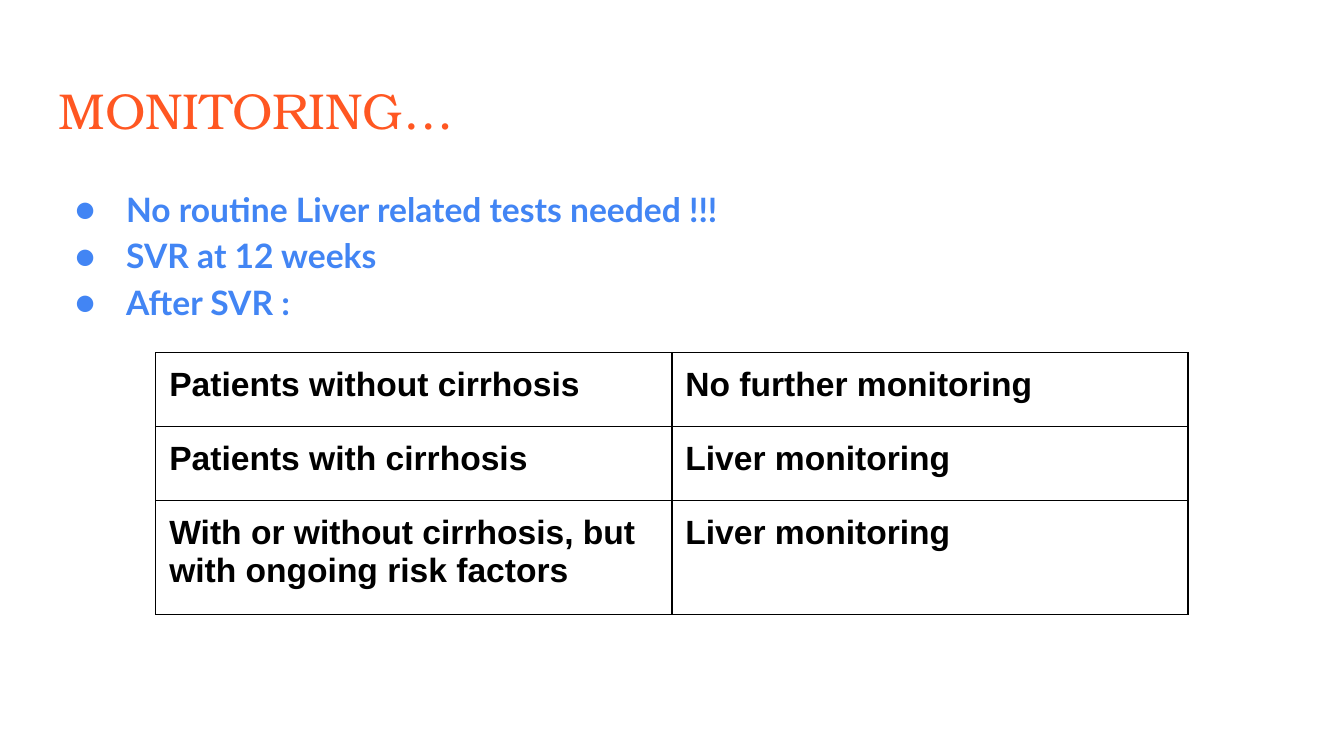
from lxml.etree import SubElement
from pptx import Presentation
from pptx.dml.color import RGBColor
from pptx.enum.text import MSO_ANCHOR
from pptx.oxml.ns import qn
from pptx.util import Inches, Pt

ORANGE = RGBColor(0xFF, 0x57, 0x22)
BLUE = RGBColor(0x42, 0x85, 0xF4)
BLACK = RGBColor(0, 0, 0)

# Widescreen page, 16 by 9
SLIDE_WIDTH = 10
SLIDE_HEIGHT = SLIDE_WIDTH * 9 / 16
MARGIN = 0.34
CONTENT_WIDTH = SLIDE_WIDTH - 2 * MARGIN
INSET = Inches(0.1)

TITLE_FORMAT = {"name": "TeX Gyre Bonum", "size": Pt(27), "bold": False, "color": ORANGE}
BULLET_FORMAT = {"name": "Lato", "size": Pt(18), "bold": True, "color": BLUE}
CELL_FORMAT = {"name": "Arial", "size": Pt(18), "bold": True, "color": BLACK}

BULLETS = [
    "No routine Liver related tests needed !!!",
    "SVR at 12 weeks",
    "After SVR :",
]
FOLLOW_UP = [
    ("Patients without cirrhosis", "No further monitoring"),
    ("Patients with cirrhosis", "Liver monitoring"),
    ("With or without cirrhosis, but with ongoing risk factors", "Liver monitoring"),
]
COLUMN_WIDTH = 3.84
ROW_HEIGHTS = [0.55, 0.55, 0.85]


def add_span(para, text, formats):
    span = para.add_run()
    span.text = text
    for key, value in formats.items():
        if key == "color":
            span.font.color.rgb = value
        else:
            setattr(span.font, key, value)


def set_insets(target):
    for side in ("left", "right", "top", "bottom"):
        setattr(target, f"margin_{side}", INSET)


def add_bullet(para, formats):
    para.line_spacing = 1.15
    properties = para._p.get_or_add_pPr()
    properties.set("marL", str(Inches(0.5)))
    properties.set("indent", str(Inches(-0.38)))
    bullet_color = SubElement(properties, qn("a:buClr"))
    SubElement(bullet_color, qn("a:srgbClr"), val=str(formats["color"]))
    SubElement(properties, qn("a:buSzPts"), val=str(formats["size"].centipoints))
    SubElement(properties, qn("a:buFont"), typeface=formats["name"])
    SubElement(properties, qn("a:buChar"), char="●")


def add_text(page, top, height, lines, formats, bulleted=False):
    box = page.shapes.add_textbox(
        Inches(MARGIN), Inches(top), Inches(CONTENT_WIDTH), Inches(height))
    frame = box.text_frame
    frame.word_wrap = True
    frame.vertical_anchor = MSO_ANCHOR.TOP
    set_insets(frame)
    for index, line in enumerate(lines):
        para = frame.add_paragraph() if index else frame.paragraphs[0]
        if bulleted:
            add_bullet(para, formats)
        add_span(para, line, formats)


def add_borders(cell, color, width):
    properties = cell._tc.get_or_add_tcPr()
    for position, side in enumerate(("a:lnL", "a:lnR", "a:lnT", "a:lnB")):
        line = properties.makeelement(qn(side), {"w": str(width)})
        fill = SubElement(line, qn("a:solidFill"))
        SubElement(fill, qn("a:srgbClr"), val=str(color))
        # Borders must precede the cell fill
        properties.insert(position, line)


def add_grid(page, left, top, rows):
    columns = len(rows[0])
    table = page.shapes.add_table(
        len(rows), columns, Inches(left), Inches(top),
        Inches(columns * COLUMN_WIDTH), Inches(sum(ROW_HEIGHTS))).table
    table.first_row = table.horz_banding = False
    for column in table.columns:
        column.width = Inches(COLUMN_WIDTH)
    for row, height, texts in zip(table.rows, ROW_HEIGHTS, rows):
        row.height = Inches(height)
        for cell, text in zip(row.cells, texts):
            set_insets(cell)
            cell.fill.background()
            add_borders(cell, BLACK, Pt(0.75))
            add_span(cell.text_frame.paragraphs[0], text, CELL_FORMAT)


def main():
    deck = Presentation()
    deck.slide_width = Inches(SLIDE_WIDTH)
    deck.slide_height = Inches(SLIDE_HEIGHT)
    page = deck.slides.add_slide(deck.slide_layouts[6])

    # Heading and key points
    add_text(page, 0.49, 0.63, ["MONITORING…"], TITLE_FORMAT)
    add_text(page, 1.26, 3.74, BULLETS, BULLET_FORMAT, bulleted=True)

    # Follow-up by patient group, centred across the page
    table_left = (SLIDE_WIDTH - len(FOLLOW_UP[0]) * COLUMN_WIDTH) / 2
    add_grid(page, table_left, SLIDE_HEIGHT * 7 / 15, FOLLOW_UP)

    deck.save("out.pptx")


if __name__ == "__main__":
    main()
